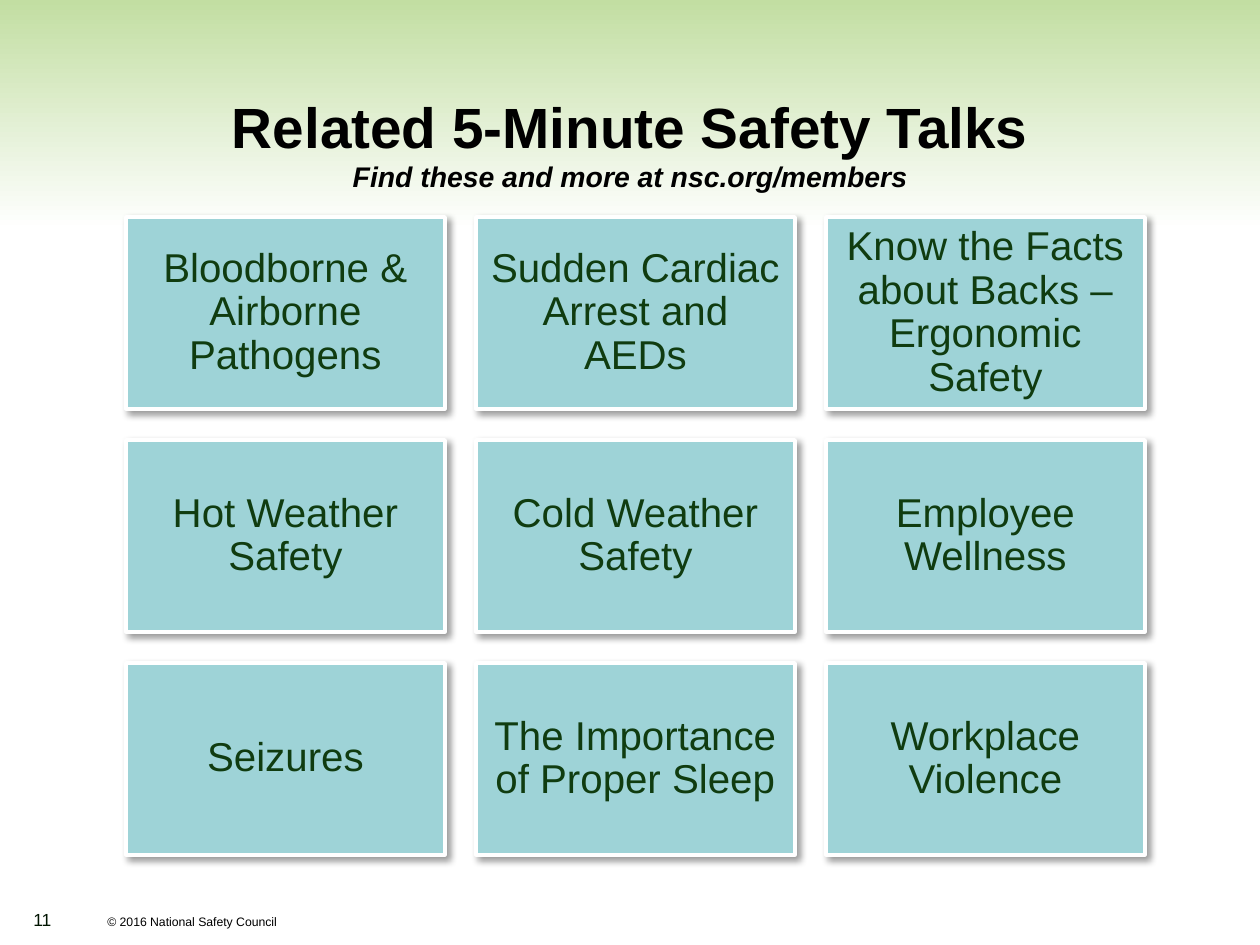
import pptx
import pptx.dml.color
import pptx.enum.shapes
import pptx.enum.text
import pptx.oxml
import pptx.oxml.ns
import pptx.util
from dataclasses import dataclass


@dataclass
class Theme:
    font: str = "Arial"
    black: str = "000000"
    white: str = "FFFFFF"
    header_green: str = "C2DEA2"
    card_fill: str = "9ED3D7"
    card_text: str = "103C10"
    number_text: str = "001400"
    title_size: float = 32.4
    subtitle_size: float = 16.2
    card_size: int = 23
    number_size: int = 10
    footer_size: int = 7


theme = Theme()
SCALE = 914400 / 126  # EMU per px


def px(*lengths):
    return [pptx.util.Emu(round(length * SCALE)) for length in lengths]


def style(span, size, color, bold=False, italic=False):
    span.font.name = theme.font
    span.font.size = pptx.util.Pt(size)
    span.font.color.rgb = pptx.dml.color.RGBColor.from_string(color)
    span.font.bold = bold
    span.font.italic = italic


deck = pptx.Presentation()
deck.slide_width, deck.slide_height = px(1260, 945)
page = deck.slides.add_slide(deck.slide_layouts[5])
shapes = page.shapes

# Title with subtitle on a second line
title = shapes.title
title.left, title.top, title.width, title.height = px(63, 95, 1134, 95)
frame = title.text_frame
frame.auto_size = pptx.enum.text.MSO_AUTO_SIZE.NONE
frame.vertical_anchor = pptx.enum.text.MSO_ANCHOR.MIDDLE
frame.text = "Related 5-Minute Safety Talks\vFind these and more at nsc.org/members"
heading, subtitle = frame.paragraphs[0].runs
style(heading, theme.title_size, theme.black, bold=True)
style(subtitle, theme.subtitle_size, theme.black, bold=True, italic=True)

# Header band, placed behind the title
band = shapes.add_shape(pptx.enum.shapes.MSO_SHAPE.RECTANGLE, *px(0, 0, 1260, 230))
band.shadow.inherit = False
band.line.fill.background()
band.fill.gradient()
band.fill.gradient_angle = 270
for stop, color in zip(band.fill.gradient_stops, (theme.header_green, theme.white)):
    stop.color.rgb = pptx.dml.color.RGBColor.from_string(color)
title._element.addprevious(band._element)

# Footer and slide number
for text, area, size, color in (
    ("© 2016 National Safety Council", (95, 908, 399, 32), theme.footer_size, theme.black),
    ("11", (21, 903, 63, 55), theme.number_size, theme.number_text),
):
    box = shapes.add_textbox(*px(*area))
    box.text_frame.word_wrap = True
    box.text_frame.text = text
    style(box.text_frame.paragraphs[0].runs[0], size, color)

# Grid of talks
TALKS = (
    "Bloodborne & Airborne Pathogens",
    "Sudden Cardiac Arrest and AEDs",
    "Know the Facts about Backs – Ergonomic Safety",
    "Hot Weather Safety",
    "Cold Weather Safety",
    "Employee Wellness",
    "Seizures",
    "The Importance of Proper Sleep",
    "Workplace Violence",
)
COLUMNS, LEFT, TOP, WIDTH, HEIGHT, GAP = 3, 126, 217, 319, 192, 31
SHADOW = (
    '<a:outerShdw %s blurRad="50800" dist="38100" dir="2700000" algn="tl" '
    'rotWithShape="0"><a:srgbClr val="%s"><a:alpha val="40000"/></a:srgbClr>'
    "</a:outerShdw>" % (pptx.oxml.ns.nsdecls("a"), theme.black)
)
for index, talk in enumerate(TALKS):
    row, column = divmod(index, COLUMNS)
    card = shapes.add_shape(
        pptx.enum.shapes.MSO_SHAPE.RECTANGLE,
        *px(LEFT + column * (WIDTH + GAP), TOP + row * (HEIGHT + GAP), WIDTH, HEIGHT),
    )
    card.fill.solid()
    card.fill.fore_color.rgb = pptx.dml.color.RGBColor.from_string(theme.card_fill)
    card.line.color.rgb = pptx.dml.color.RGBColor.from_string(theme.white)
    card.line.width = pptx.util.Pt(2)
    card.shadow.inherit = False
    effects = card._element.spPr.find(pptx.oxml.ns.qn("a:effectLst"))
    effects.append(pptx.oxml.parse_xml(SHADOW))

    frame = card.text_frame
    frame.word_wrap = True
    frame.vertical_anchor = pptx.enum.text.MSO_ANCHOR.MIDDLE
    (inset,) = px(12)
    frame.margin_left = frame.margin_right = inset
    frame.margin_top = frame.margin_bottom = inset
    frame.text = talk
    para = frame.paragraphs[0]
    para.alignment = pptx.enum.text.PP_ALIGN.CENTER
    para.line_spacing = 0.9
    style(para.runs[0], theme.card_size, theme.card_text)

deck.save("out.pptx")
